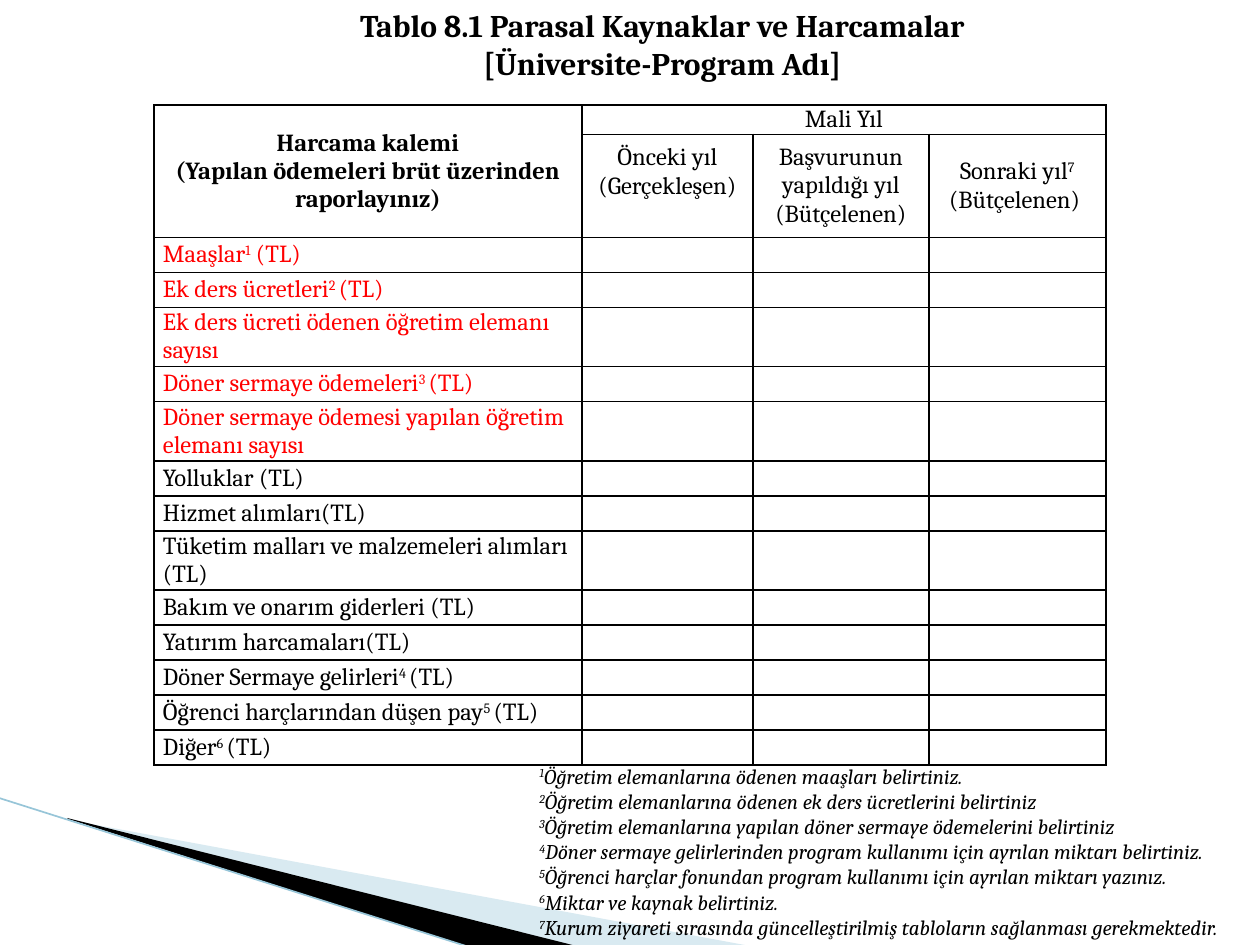
from dataclasses import dataclass

from lxml.etree import SubElement, fromstring
from pptx import Presentation
from pptx.dml.color import RGBColor
from pptx.enum.shapes import MSO_CONNECTOR as Conn
from pptx.enum.text import MSO_ANCHOR as Anchor, MSO_AUTO_SIZE as Fit, PP_ALIGN as Align
from pptx.oxml.ns import nsdecls, qn
from pptx.util import Pt

PX = 914400 // 126
BLACK = RGBColor(0x00, 0x00, 0x00)
RED = RGBColor(0xFF, 0x00, 0x00)
PALE = RGBColor(0xA0, 0xCB, 0xDC)
TEAL = RGBColor(0x97, 0xC5, 0xD8)
FONT = "Cambria"
INDENT = 15
COLS = [428, 171, 176, 177]
HEAD_ROWS = [28, 103]


@dataclass
class Style:
    size: int
    color: RGBColor = BLACK
    bold: bool = False
    italic: bool = False
    align: Align = Align.LEFT
    indent: int = 0


@dataclass
class Head:
    row: int
    col: int
    lines: list[str]
    bold: bool = False
    bottom: int = 0


@dataclass
class Item:
    text: str
    high: int = 35
    color: RGBColor = BLACK


@dataclass
class Wedge:
    points: list[tuple[int, int]]
    color: RGBColor
    alpha: int = 100


TITLE = ["Tablo 8.1 Parasal Kaynaklar ve Harcamalar", "[Üniversite-Program Adı]"]
HEADS = [
    Head(0, 0, ["Harcama kalemi", "(Yapılan ödemeleri brüt üzerinden raporlayınız)"], True),
    Head(0, 1, ["Mali Yıl"]),
    Head(1, 1, ["Önceki yıl (Gerçekleşen)"], bottom=28),
    Head(1, 2, ["Başvurunun yapıldığı yıl (Bütçelenen)"]),
    Head(1, 3, ["Sonraki yıl^7", "(Bütçelenen) "]),
]
ITEMS = [
    Item("Maaşlar^1^ (TL)", color=RED),
    Item("Ek ders ücretleri^2 ^(TL)", color=RED),
    Item("Ek ders ücreti ödenen öğretim elemanı sayısı", 57, RED),
    Item("Döner sermaye ödemeleri^3 ^(TL)", color=RED),
    Item("Döner sermaye ödemesi yapılan öğretim elemanı sayısı", 60, RED),
    Item("Yolluklar (TL)"),
    Item("Hizmet alımları(TL)"),
    Item("Tüketim malları ve malzemeleri alımları (TL)", 57),
    Item("Bakım ve onarım giderleri (TL)"),
    Item("Yatırım harcamaları(TL)"),
    Item("Döner Sermaye gelirleri^4 ^(TL)"),
    Item("Öğrenci harçlarından düşen pay^5 ^(TL)"),
    Item("Diğer^6 ^(TL)"),
]
NOTES = [
    "Öğretim elemanlarına ödenen maaşları belirtiniz.",
    "Öğretim elemanlarına ödenen ek ders ücretlerini belirtiniz",
    "Öğretim elemanlarına yapılan döner sermaye ödemelerini belirtiniz",
    "Döner sermaye gelirlerinden program kullanımı için ayrılan miktarı belirtiniz.",
    "Öğrenci harçlar fonundan program kullanımı için ayrılan miktarı yazınız.",
    "Miktar ve kaynak belirtiniz.",
    "Kurum ziyareti sırasında güncelleştirilmiş tabloların sağlanması gerekmektedir.",
]
WEDGES = [
    Wedge([(69, 820), (750, 946), (575, 946), (69, 819)], PALE, 40),
    Wedge([(67, 818), (576, 946), (469, 947), (68, 819)], BLACK),
]


def write(frame, lines: list[str], style: Style) -> None:
    for i, line in enumerate(lines):
        para = frame.paragraphs[0] if i == 0 else frame.add_paragraph()
        para.alignment = style.align
        if style.indent:
            props = para._p.get_or_add_pPr()
            props.set("marL", "0")
            props.set("indent", str(style.indent * PX))
        for j, part in enumerate(line.split("^")):
            if not part:
                continue
            run = para.add_run()
            run.text = part
            font = run.font
            font.name, font.size = FONT, Pt(style.size)
            font.bold, font.italic = style.bold, style.italic
            font.color.rgb = style.color
            if j % 2:
                font._element.set("baseline", "30000")


def place(shape, left: int, top: int, wide: int, high: int) -> None:
    shape.left, shape.top = left * PX, top * PX
    shape.width, shape.height = wide * PX, high * PX


def draw_wedge(shapes, wedge: Wedge) -> None:
    pen = shapes.build_freeform(*wedge.points[0], scale=PX)
    pen.add_line_segments(wedge.points[1:], close=True)
    shape = pen.convert_to_shape()
    shape.shadow.inherit = False
    shape.fill.solid()
    shape.fill.fore_color.rgb = wedge.color
    shape.line.fill.background()
    if wedge.alpha < 100:
        color = shape.fill._xPr.find(qn("a:solidFill"))[0]
        SubElement(color, qn("a:alpha"), val=str(wedge.alpha * 1000))


def draw_edge(shapes) -> None:
    line = shapes.add_connector(Conn.STRAIGHT, -PX, 798 * PX, 469 * PX, 947 * PX)
    line.line.color.rgb = TEAL
    line.line.width = Pt(0.95)
    SubElement(line._element.spPr, qn("a:effectLst"))


def prepare(cell) -> None:
    cell.fill.background()
    cell.vertical_anchor = Anchor.MIDDLE
    cell.margin_left = cell.margin_right = 9 * PX
    cell.margin_top = cell.margin_bottom = 0
    props = cell._tc.get_or_add_tcPr()
    for i, side in enumerate("LRTB"):
        props.insert(i, fromstring(
            f'<a:ln{side} {nsdecls("a")} w="12700"><a:solidFill>'
            f'<a:srgbClr val="{BLACK}"/></a:solidFill></a:ln{side}>'))


def draw_table(shapes) -> None:
    rows = HEAD_ROWS + [item.high for item in ITEMS]
    table = shapes.add_table(len(rows), len(COLS), 154 * PX, 105 * PX,
                             sum(COLS) * PX, sum(rows) * PX).table
    table.first_row = table.horz_banding = False
    for col, wide in zip(table.columns, COLS):
        col.width = wide * PX
    for row, high in zip(table.rows, rows):
        row.height = high * PX
    for cell in table.iter_cells():
        prepare(cell)
    table.cell(0, 0).merge(table.cell(1, 0))
    table.cell(0, 1).merge(table.cell(0, 3))
    for head in HEADS:
        cell = table.cell(head.row, head.col)
        cell.margin_bottom = head.bottom * PX
        write(cell.text_frame, head.lines, Style(14, bold=head.bold, align=Align.CENTER))
    for i, item in enumerate(ITEMS, len(HEAD_ROWS)):
        write(table.cell(i, 0).text_frame, [item.text], Style(14, item.color))
    for cell in table.iter_cells():
        if not cell.text_frame.text:
            SubElement(cell.text_frame.paragraphs[0]._p, qn("a:endParaRPr"), sz="1400")


def main() -> None:
    deck = Presentation()
    deck.slide_width, deck.slide_height = 1260 * PX, 945 * PX
    slide = deck.slides.add_slide(deck.slide_layouts[5])
    shapes = slide.shapes
    for wedge in WEDGES:
        draw_wedge(shapes, wedge)
    draw_edge(shapes)
    draw_table(shapes)

    notes = shapes.add_textbox(0, 0, PX, PX)
    place(notes, 512, 757, 748, 190)
    notes.text_frame.word_wrap = True
    notes.text_frame.auto_size = Fit.SHAPE_TO_FIT_TEXT
    lines = [f"^{i}^{note}" for i, note in enumerate(NOTES, 1)]
    write(notes.text_frame, lines, Style(12, italic=True, indent=INDENT))

    title = shapes.title
    place(title, 154, 0, 1002, 89)
    title.text_frame.vertical_anchor = Anchor.TOP
    title.text_frame.auto_size = Fit.SHAPE_TO_FIT_TEXT
    write(title.text_frame, TITLE, Style(18, bold=True, align=Align.CENTER, indent=INDENT))
    deck.save("out.pptx")


if __name__ == "__main__":
    main()
